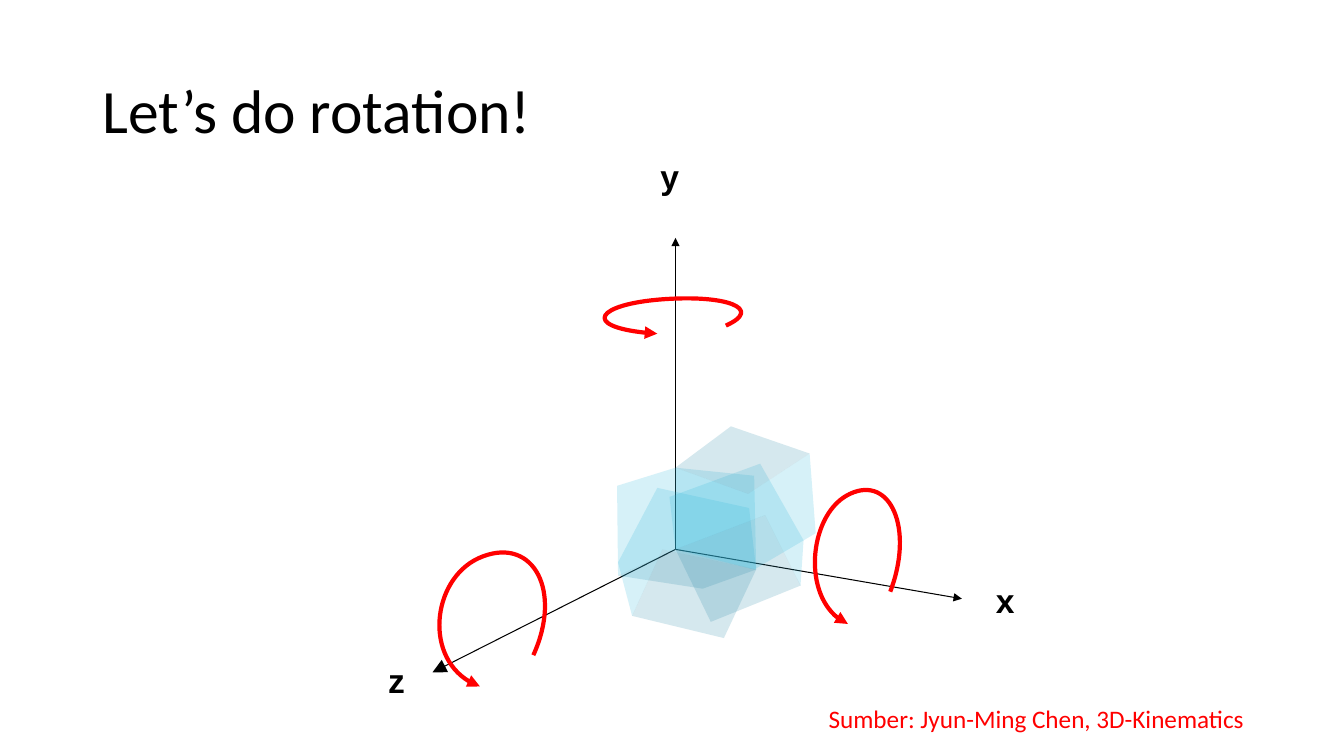
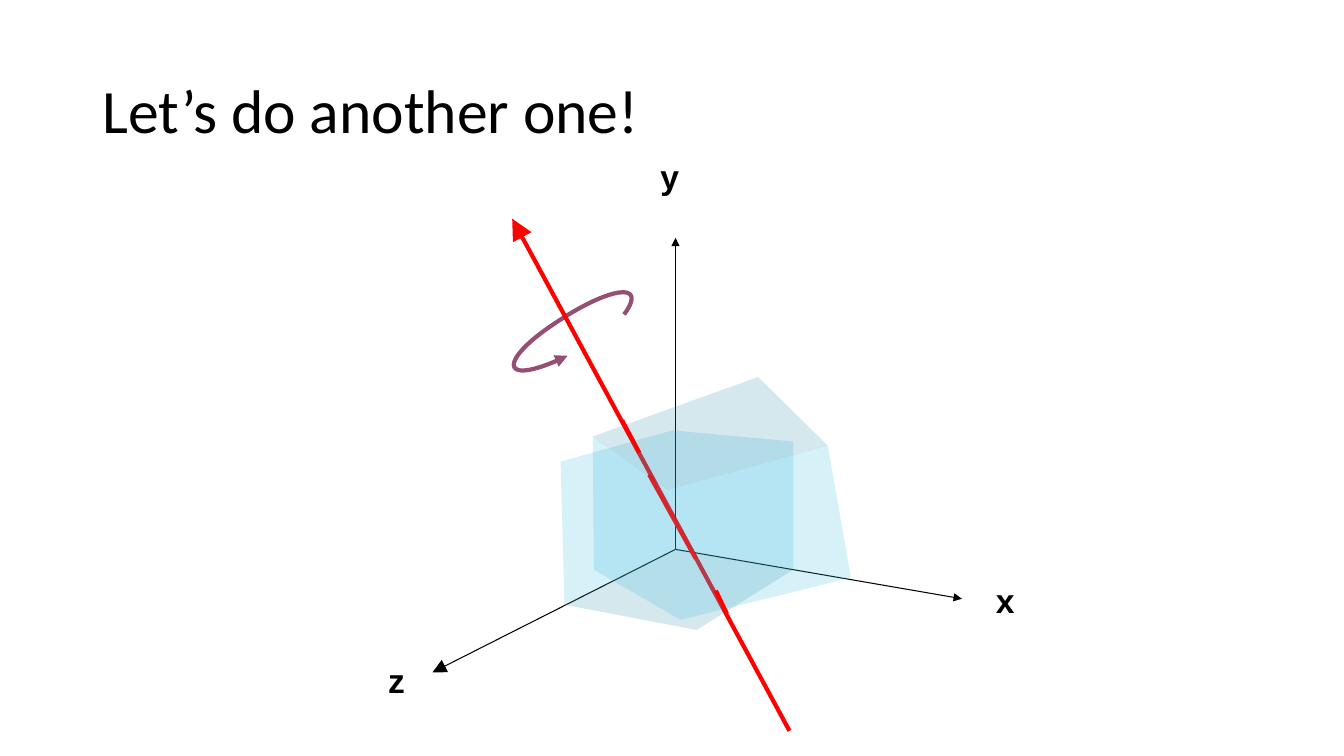
from pptx import Presentation
from pptx.dml.color import RGBColor
from pptx.enum.shapes import MSO_CONNECTOR
from pptx.enum.text import MSO_ANCHOR
from pptx.oxml.ns import qn
from pptx.util import Inches, Pt
from lxml import etree

BLACK = RGBColor(0x00, 0x00, 0x00)
RED = RGBColor(0xFF, 0x00, 0x00)
PLUM = RGBColor(0x95, 0x4F, 0x72)
LIT_FACE = RGBColor(0x32, 0xB9, 0xDC)
DARK_FACE = RGBColor(0x2D, 0x8C, 0xAA)

STRAIGHT = MSO_CONNECTOR.STRAIGHT
MIDDLE = MSO_ANCHOR.MIDDLE
TOP = MSO_ANCHOR.TOP

BLANK_LAYOUT = 6
UNITS_PER_INCH = 914400
FACE_OPACITY = 20
THIN, THICK = 0.75, 3

ORIGIN = (6.7, 5.45)
AXES = [((6.7, 2.36), "med"), ((9.54, 5.94), "med"), ((4.29, 6.67), "lg")]
AXIS_LABELS = [("x", 9.78, 5.7), ("y", 6.45, 1.5), ("z", 3.75, 6.5)]

TURN_X = [(8.83, 5.87), (9.07, 5.24), (8.83, 4.71), (8.43, 4.9),
          (8.04, 5.08), (7.93, 5.98), (8.41, 6.19)]
TURN_Y = [(7.2, 3.23), (7.58, 3.06), (7.2, 2.92), (6.56, 2.97),
          (5.92, 3.02), (5.75, 3.26), (6.52, 3.31)]
TURN_Z = [(5.29, 6.5), (5.58, 5.86), (5.29, 5.33), (4.79, 5.52),
          (4.3, 5.7), (4.17, 6.6), (4.76, 6.81)]
TURN_TILTED = [(6.19, 3.12), (6.44, 2.78), (6.03, 2.85), (5.5, 3.21),
               (4.97, 3.56), (4.94, 3.86), (5.63, 3.53)]

START_CUBE = (
    [(6.12, 4.82), (6.7, 4.64), (7.48, 4.72), (7.5, 5.65), (6.7, 5.45), (6.13, 5.71)],
    [(6.13, 5.71), (6.7, 5.45), (7.5, 5.65), (6.97, 5.84)],
)
RIGHT_CUBE = (
    [(6.64, 4.93), (7.54, 4.6), (7.97, 5.36), (7.94, 5.81), (7.59, 5.11), (6.7, 5.45)],
    [(6.7, 5.45), (7.59, 5.11), (7.94, 5.81), (7.05, 6.17)],
)
LOWER_CUBE = (
    [(6.52, 4.84), (7.43, 5.04), (7.5, 5.65), (6.57, 5.45), (6.27, 6.11), (6.13, 5.58)],
    [(6.27, 6.11), (6.57, 5.45), (7.5, 5.65), (7.18, 6.33)],
)
UPPER_CUBE = (
    [(6.7, 4.64), (7.42, 4.9), (8.03, 4.5), (8.09, 5.29), (7.48, 5.65), (6.7, 5.45)],
    [(6.7, 4.64), (7.25, 4.23), (8.03, 4.5), (7.42, 4.9)],
)
LARGE_CUBE = (
    [(5.56, 4.58), (6.67, 4.27), (7.87, 4.38), (7.87, 5.65), (6.7, 5.45), (5.6, 6)],
    [(5.6, 6), (6.7, 5.45), (7.87, 5.65), (6.91, 6.25)],
)
TURNED_CUBE = (
    [(5.88, 4.33), (6.62, 4.86), (8.21, 4.42), (8.44, 5.73), (6.75, 6.15), (5.89, 5.65)],
    [(5.88, 4.33), (7.52, 3.74), (8.21, 4.42), (6.62, 4.86)],
)


def add_text(slide, text, box, size, font_name, color, bold=False, anchor=TOP, wrap=False):
    shape = slide.shapes.add_textbox(*map(Inches, box))
    frame = shape.text_frame
    frame.word_wrap = wrap
    frame.vertical_anchor = anchor
    paragraph = frame.paragraphs[0]
    paragraph.text = text
    paragraph.font.size = Pt(size)
    paragraph.font.name = font_name
    paragraph.font.bold = bold
    paragraph.font.color.rgb = color
    return paragraph


def add_title(slide, text):
    paragraph = add_text(slide, text, (0.92, 0.4, 11.5, 1.45), 44, "Calibri",
                         BLACK, anchor=MIDDLE, wrap=True)
    paragraph.line_spacing = 0.9


def style_line(shape, color, width, head=None):
    shape.line.color.rgb = color
    shape.line.width = Pt(width)
    if head:
        outline = shape.element.spPr.find(qn("a:ln"))
        etree.SubElement(outline, qn("a:tailEnd"), type="triangle", w=head, len=head)


def add_line(slide, start, end, color, width, head=None):
    connector = slide.shapes.add_connector(STRAIGHT, *map(Inches, start + end))
    style_line(connector, color, width, head)
    etree.SubElement(connector.element.spPr, qn("a:effectLst"))


def add_outline(slide, points, close):
    builder = slide.shapes.build_freeform(*points[0], scale=UNITS_PER_INCH)
    builder.add_line_segments(points[1:], close=close)
    shape = builder.convert_to_shape()
    shape.shadow.inherit = False
    return shape


def add_turn_arrow(slide, points, color):
    points = [(Inches(x), Inches(y)) for x, y in points]
    builder = slide.shapes.build_freeform(*points[0])
    builder.add_line_segments(points[1:], close=False)
    shape = builder.convert_to_shape()
    shape.shadow.inherit = False
    shape.fill.background()
    style_line(shape, color, THICK, "med")
    outline = next(shape.element.iter(qn("a:path")))
    segments = outline.findall(qn("a:lnTo"))
    for first in range(0, len(segments), 3):
        curve = etree.SubElement(outline, qn("a:cubicBezTo"))
        for segment in segments[first:first + 3]:
            curve.append(segment[0])
            outline.remove(segment)


def add_face(slide, points, color):
    points = [(Inches(x), Inches(y)) for x, y in points]
    builder = slide.shapes.build_freeform(*points[0])
    builder.add_line_segments(points[1:], close=True)
    shape = builder.convert_to_shape()
    shape.shadow.inherit = False
    shape.fill.solid()
    shape.fill.fore_color.rgb = color
    shape.line.fill.background()
    fill_color = shape.element.spPr.find(qn("a:solidFill"))[0]
    etree.SubElement(fill_color, qn("a:alpha"), val=str(FACE_OPACITY * 1000))


def add_cube(slide, cube):
    for points, color in zip(cube, (LIT_FACE, DARK_FACE)):
        add_face(slide, points, color)


def add_axes(slide):
    for end, head in AXES:
        add_line(slide, ORIGIN, end, BLACK, THIN, head)
    for name, left, top in AXIS_LABELS:
        add_text(slide, name, (left, top, 0.39, 0.51), 24, "Arial", BLACK, bold=True)


def add_slide(presentation):
    return presentation.slides.add_slide(presentation.slide_layouts[BLANK_LAYOUT])


def build_axis_rotation(presentation):
    slide = add_slide(presentation)
    add_title(slide, "Let’s do rotation!")
    add_axes(slide)
    for cube in (START_CUBE, LOWER_CUBE, RIGHT_CUBE, UPPER_CUBE):
        add_cube(slide, cube)
    for turn in (TURN_X, TURN_Y, TURN_Z):
        add_turn_arrow(slide, turn, RED)
    add_text(slide, "Sumber: Jyun-Ming Chen, 3D-Kinematics",
             (8.12, 6.93, 4.43, 0.4), 18, "Calibri", RED)


def build_tilted_rotation(presentation):
    slide = add_slide(presentation)
    add_turn_arrow(slide, TURN_TILTED, PLUM)
    add_title(slide, "Let’s do another one!")
    add_line(slide, (7.83, 7.25), (5.08, 2.17), RED, THICK, "lg")
    add_axes(slide)
    add_cube(slide, LARGE_CUBE)
    add_line(slide, (6.44, 4.71), (6.9, 5.54), RED, THICK)
    add_cube(slide, TURNED_CUBE)
    add_line(slide, (6.17, 4.17), (6.34, 4.49), RED, THICK)
    add_line(slide, (7.21, 6.09), (7.1, 5.86), RED, THICK)


def main():
    presentation = Presentation()
    presentation.slide_width = Inches(13.33)
    presentation.slide_height = Inches(7.5)
    build_axis_rotation(presentation)
    build_tilted_rotation(presentation)
    presentation.save("out.pptx")


if __name__ == "__main__":
    main()
